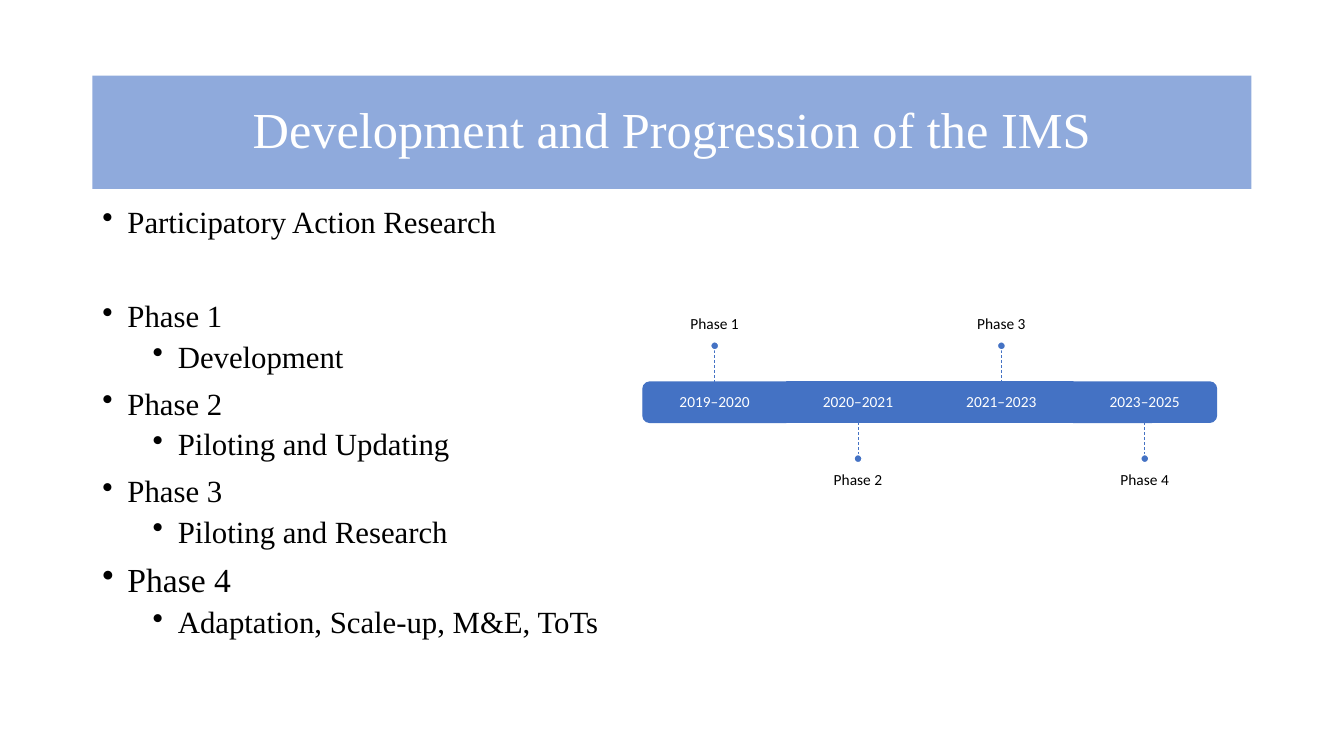
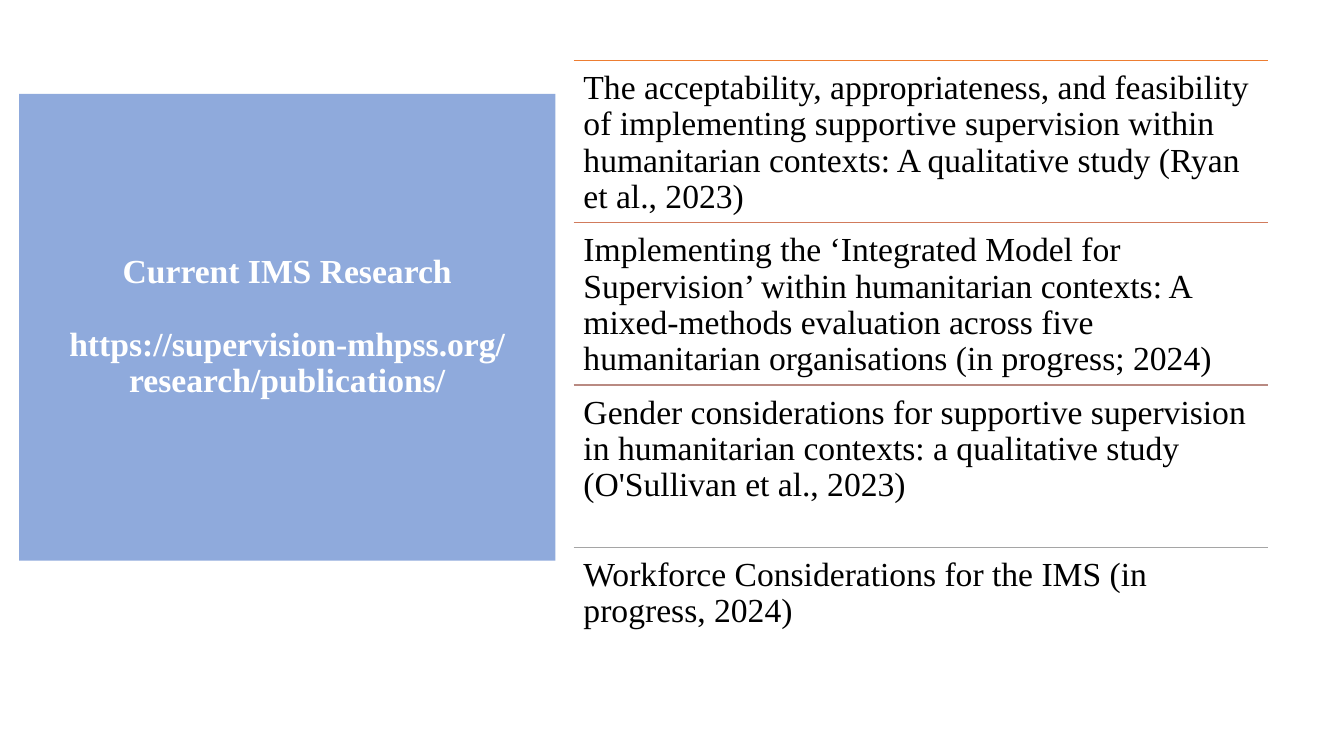
"""Build two slides on the phases and the research of the IMS."""
from dataclasses import dataclass

from lxml import etree
from pptx import Presentation
from pptx.dml.color import RGBColor
from pptx.enum.dml import MSO_LINE
from pptx.enum.shapes import MSO_CONNECTOR, MSO_SHAPE
from pptx.enum.text import MSO_ANCHOR, PP_ALIGN
from pptx.oxml.ns import qn
from pptx.util import Pt

RECT = MSO_SHAPE.RECTANGLE
ROUND = MSO_SHAPE.ROUND_2_SAME_RECTANGLE
OVAL = MSO_SHAPE.OVAL
LINE = MSO_CONNECTOR.STRAIGHT
DASH = MSO_LINE.DASH
LEFT, CENTER = PP_ALIGN.LEFT, PP_ALIGN.CENTER
TOP, MIDDLE, BOTTOM = MSO_ANCHOR.TOP, MSO_ANCHOR.MIDDLE, MSO_ANCHOR.BOTTOM

COLORS = {
    "band": "8FAADC",
    "blue": "4472C4",
    "white": "FFFFFF",
    "black": "000000",
    "rule1": "ED7D31",
    "rule2": "D17B5C",
    "rule3": "B98A82",
    "rule4": "A5A5A5",
}
SERIF, SANS = "Times New Roman", "Calibri"
PAD = (7.2, 3.6, 7.2, 3.6)


@dataclass(frozen=True)
class Box:
    """Place and size in points."""
    x: float
    y: float
    w: float
    h: float

    def pts(self):
        """Return the four lengths for python-pptx."""
        return Pt(self.x), Pt(self.y), Pt(self.w), Pt(self.h)


@dataclass(frozen=True)
class Para:
    """One paragraph, with a bullet level if it has one."""
    text: str
    level: int | None = None
    before: float = 0
    size: float | None = None


@dataclass(frozen=True)
class Phase:
    """One step of the timeline; side is -1 above and 1 below."""
    name: str
    years: str
    side: int
    turn: int | None = None


@dataclass(frozen=True)
class Study:
    """One study and the colour of the rule above it."""
    text: str
    color: str


POINTS = [
    Para("Participatory Action Research", 0, 10),
    Para("Phase 1", 0, 44),
    Para("Development", 1, 5),
    Para("Phase 2", 0, 10),
    Para("Piloting and Updating", 1, 5),
    Para("Phase 3", 0, 10),
    Para("Piloting and Research", 1, 5),
    Para("Phase 4", 0, 10, 24),
    Para("Adaptation, Scale-up, M&E, ToTs", 1, 5),
]
PHASES = [
    Phase("Phase 1", "2019–2020", -1, 270),
    Phase("Phase 2", "2020–2021", 1),
    Phase("Phase 3", "2021–2023", -1),
    Phase("Phase 4", "2023–2025", 1, 90),
]
STUDIES = [
    Study("The acceptability, appropriateness, and feasibility of implementing "
          "supportive supervision within humanitarian contexts: A qualitative "
          "study (Ryan et al., 2023)", "rule1"),
    Study("Implementing the ‘Integrated Model for Supervision’ within "
          "humanitarian contexts: A mixed-methods evaluation across five "
          "humanitarian organisations (in progress; 2024)", "rule2"),
    Study("Gender considerations for supportive supervision in humanitarian "
          "contexts: a qualitative study (O'Sullivan et al., 2023)", "rule3"),
    Study("Workforce Considerations for the IMS (in progress, 2024)", "rule4"),
]


def rgb(name: str) -> RGBColor:
    """Look up a colour by name."""
    return RGBColor.from_string(COLORS[name])


def add_bullet(para, level: int) -> None:
    """Give a paragraph a hanging bullet."""
    para.level = level
    props = para._p.get_or_add_pPr()
    props.set("marL", str(Pt(18 + 36 * level)))
    props.set("indent", str(Pt(-18)))
    etree.SubElement(props, qn("a:buChar")).set("char", "•")


def write(shape, paras: list[Para], *, size: float, font: str = SERIF,
          color: str = "black", bold: bool = False, align=LEFT,
          anchor=TOP, pad=PAD) -> None:
    """Fill a shape with formatted paragraphs."""
    frame = shape.text_frame
    frame.word_wrap = True
    frame.vertical_anchor = anchor
    (frame.margin_left, frame.margin_top,
     frame.margin_right, frame.margin_bottom) = map(Pt, pad)
    for i, item in enumerate(paras):
        para = frame.paragraphs[0] if i == 0 else frame.add_paragraph()
        para.alignment = align
        para.line_spacing = 0.9
        para.space_before = Pt(item.before)
        if item.level is not None:
            add_bullet(para, item.level)
        run = para.add_run()
        run.text = item.text
        run.font.name = font
        run.font.size = Pt(item.size or size)
        run.font.bold = bold
        run.font.color.rgb = rgb(color)


def add_text(slide, box: Box, paras: list[Para], **form) -> None:
    """Add a text box."""
    write(slide.shapes.add_textbox(*box.pts()), paras, **form)


def add_form(slide, kind, box: Box, fill: str, line: str | None = None):
    """Add a flat preset shape."""
    shape = slide.shapes.add_shape(kind, *box.pts())
    shape.shadow.inherit = False
    shape.fill.solid()
    shape.fill.fore_color.rgb = rgb(fill)
    if line:
        shape.line.color.rgb = rgb(line)
        shape.line.width = Pt(1)
    else:
        shape.line.fill.background()
    return shape


def add_line(slide, start: tuple[float, float], end: tuple[float, float],
             color: str, width: float, dash=None) -> None:
    """Add a straight line without a shadow."""
    line = slide.shapes.add_connector(LINE, *map(Pt, start + end))
    line.line.color.rgb = rgb(color)
    line.line.width = Pt(width)
    if dash:
        line.line.dash_style = dash
    etree.SubElement(line._element.spPr, qn("a:effectLst"))


def add_title(slide, box: Box, paras: list[Para], size: float,
              bold: bool = False) -> None:
    """Add the blue title band."""
    band = add_form(slide, RECT, box, "band")
    write(band, paras, size=size, color="white", bold=bold,
          align=CENTER, anchor=MIDDLE)


def add_phase(slide, phase: Phase, x: float) -> None:
    """Draw one step of the timeline around its centre x."""
    mid, wide, high, dot, side = 287.3, 102.4, 28.8, 5.8, phase.side
    cell = Box(x - wide / 2, mid - high / 2, wide, high)
    if phase.turn is None:
        add_form(slide, RECT, cell, "blue", "blue")
    else:
        tall = Box(x - high / 2, mid - wide / 2, high, wide)
        add_form(slide, ROUND, tall, "blue", "blue").rotation = phase.turn
    add_text(slide, cell, [Para(phase.years)], size=11, font=SANS,
             color="white", align=CENTER, anchor=MIDDLE, pad=(6.5,) * 4)

    edge, stem = mid + side * high / 2, 23
    tip = edge + side * stem
    add_line(slide, (x, tip), (x, edge), "blue", 0.5, DASH)
    core = tip + side * dot / 2
    add_form(slide, OVAL, Box(x - dot / 2, core - dot / 2, dot, dot),
             "blue", "white")

    far, width, height = tip + side * dot, 170.6, 100.8
    above = side < 0
    add_text(slide, Box(x - width / 2, far - height if above else far,
                        width, height),
             [Para(phase.name)], size=11, font=SANS, align=CENTER,
             anchor=BOTTOM if above else TOP,
             pad=(0, 0, 0, 6.5) if above else (0, 6.5, 0, 0))


def draw_phases(slide) -> None:
    """Draw the slide on the phases."""
    add_title(slide, Box(66, 54, 828, 81),
              [Para("Development and Progression of the IMS")], 36)
    add_text(slide, Box(66, 144, 828, 342.7), POINTS, size=22)
    for i, phase in enumerate(PHASES):
        add_phase(slide, phase, 510.5 + 102.4 * i)


def draw_studies(slide) -> None:
    """Draw the slide on the research."""
    link = "https://supervision-mhpss.org/research/publications/"
    add_title(slide, Box(13.7, 67, 383, 333.4),
              [Para("Current IMS Research"), Para(link, before=25.7)],
              24, True)
    left, top, wide, high = 409.7, 43.2, 496.1, 115.9
    for i, study in enumerate(STUDIES):
        y = top + high * i
        add_line(slide, (left, y), (left + wide, y), study.color, 1)
        add_text(slide, Box(left, y, wide, high), [Para(study.text)],
                 size=24, pad=(7.2,) * 4)


def main() -> None:
    """Build and save the deck."""
    deck = Presentation()
    deck.slide_width, deck.slide_height = Pt(960), Pt(540)
    for draw in (draw_phases, draw_studies):
        draw(deck.slides.add_slide(deck.slide_layouts[6]))
    deck.save("out.pptx")


if __name__ == "__main__":
    main()
